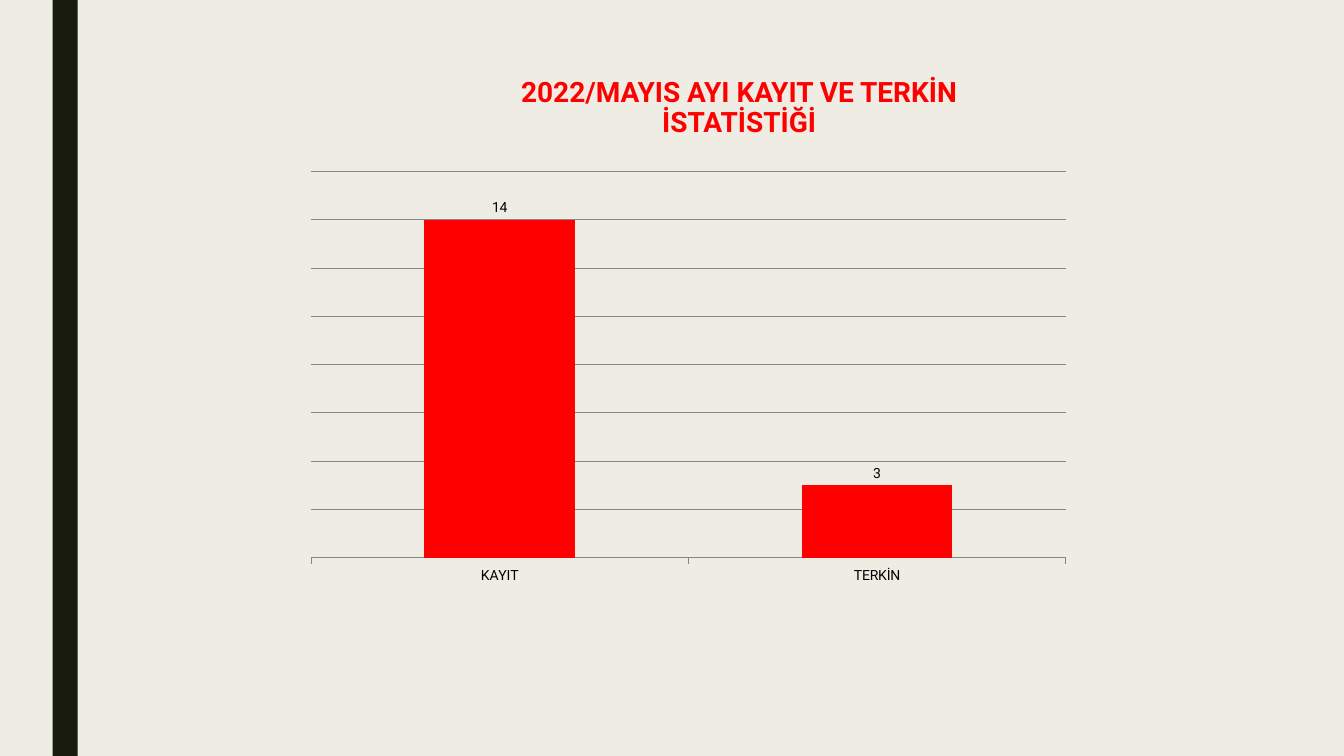
from dataclasses import dataclass

from lxml import etree
from pptx import Presentation
from pptx.chart.data import CategoryChartData
from pptx.dml.color import RGBColor
from pptx.enum.chart import XL_CHART_TYPE, XL_LABEL_POSITION, XL_TICK_MARK
from pptx.enum.shapes import MSO_SHAPE
from pptx.enum.text import MSO_ANCHOR, MSO_AUTO_SIZE, PP_ALIGN
from pptx.oxml import parse_xml
from pptx.oxml.ns import nsdecls
from pptx.util import Pt

COLUMN = XL_CHART_TYPE.COLUMN_CLUSTERED
OUTSIDE_END = XL_LABEL_POSITION.OUTSIDE_END
TICK_OUT = XL_TICK_MARK.OUTSIDE
RECTANGLE = MSO_SHAPE.RECTANGLE
TOP = MSO_ANCHOR.TOP
CENTER = PP_ALIGN.CENTER
NO_AUTOFIT = MSO_AUTO_SIZE.NONE
TITLE_ONLY = 5


@dataclass(frozen=True)
class Theme:
    background: RGBColor = RGBColor(0xEF, 0xED, 0xE3)
    stripe: RGBColor = RGBColor(0x19, 0x1B, 0x0E)
    accent: RGBColor = RGBColor(0xFF, 0, 0)
    text: RGBColor = RGBColor(0, 0, 0)
    grid: RGBColor = RGBColor(0x86, 0x86, 0x86)
    font: str = "Roboto"
    title_size: int = 20
    chart_size: int = 10


THEME = Theme()


def format_font(font, size, color, bold=False):
    font.name = THEME.font
    font.size = Pt(size)
    font.bold = bold
    font.color.rgb = color


def write_text(frame, text, *, size, color, bold=False, align=CENTER, spacing=1.0):
    frame.word_wrap = True
    frame.auto_size = NO_AUTOFIT
    frame.vertical_anchor = TOP
    paragraph = frame.paragraphs[0]
    paragraph.alignment = align
    paragraph.line_spacing = spacing
    run = paragraph.add_run()
    run.text = text
    format_font(run.font, size, color, bold)


def add_stripe(slide, left, top, width, height):
    stripe = slide.shapes.add_shape(RECTANGLE, Pt(left), Pt(top), Pt(width), Pt(height))
    stripe.shadow.inherit = False
    stripe.fill.solid()
    stripe.fill.fore_color.rgb = THEME.stripe
    stripe.line.fill.background()


def place_title(slide, left, top, width, height):
    title = slide.shapes.title
    title.left, title.top = Pt(left), Pt(top)
    title.width, title.height = Pt(width), Pt(height)
    write_text(title.text_frame, "2022/MAYIS AYI KAYIT VE TERKİN İSTATİSTİĞİ",
               size=THEME.title_size, color=THEME.accent, bold=True, spacing=0.89)


def set_plot_layout(chart, x, y, w, h):
    """Fix the inner plot area, in fractions of the chart's size."""
    layout = parse_xml(f"<c:layout {nsdecls('c')}><c:manualLayout/></c:layout>")
    settings = {"layoutTarget": "inner", "xMode": "edge", "yMode": "edge",
                "x": x, "y": y, "w": w, "h": h}
    for tag, value in settings.items():
        namespace = etree.QName(layout).namespace
        etree.SubElement(layout[0], f"{{{namespace}}}{tag}", val=str(value))
    plot_area = chart.plots[0]._element.getparent()
    for previous in plot_area.findall(layout.tag):
        plot_area.remove(previous)
    plot_area.insert(0, layout)


def style_line(line):
    line.color.rgb = THEME.grid
    line.width = Pt(0.75)


def add_statistics(slide, left, top, width, height):
    counts = CategoryChartData()
    counts.categories = ["KAYIT", "TERKİN"]
    counts.add_series("Series 1", [14, 3])
    chart = slide.shapes.add_chart(
        COLUMN, Pt(left), Pt(top), Pt(width), Pt(height), counts).chart
    chart.has_title = False
    chart.has_legend = False
    format_font(chart.font, THEME.chart_size, THEME.text)

    columns = chart.plots[0]
    columns.gap_width = 150
    columns.vary_by_categories = False
    fill = columns.series[0].format.fill
    fill.solid()
    fill.fore_color.rgb = THEME.accent
    columns.has_data_labels = True
    columns.data_labels.show_value = True
    columns.data_labels.position = OUTSIDE_END
    format_font(columns.data_labels.font, THEME.chart_size, THEME.text)

    chart.category_axis.major_tick_mark = TICK_OUT
    style_line(chart.category_axis.format.line)
    scale = chart.value_axis
    scale.visible = False
    scale.minimum_scale, scale.maximum_scale, scale.major_unit = 0, 16, 2
    scale.has_major_gridlines = True
    style_line(scale.major_gridlines.format.line)
    set_plot_layout(chart, 0.02, 0.02, 0.96, 0.9)


def build_statistics_slide(presentation, width, height):
    slide = presentation.slides.add_slide(presentation.slide_layouts[TITLE_ONLY])
    slide.background.fill.solid()
    slide.background.fill.fore_color.rgb = THEME.background
    add_stripe(slide, 37.5, 0, 18, height)
    place_title(slide, width / 3, 52.5, 416, 37.5)
    add_statistics(slide, 211, 116.5, 561.5, 306.5)


def main():
    width, height = 960, 540
    presentation = Presentation()
    presentation.slide_width, presentation.slide_height = Pt(width), Pt(height)
    build_statistics_slide(presentation, width, height)
    presentation.save("out.pptx")


if __name__ == "__main__":
    main()
